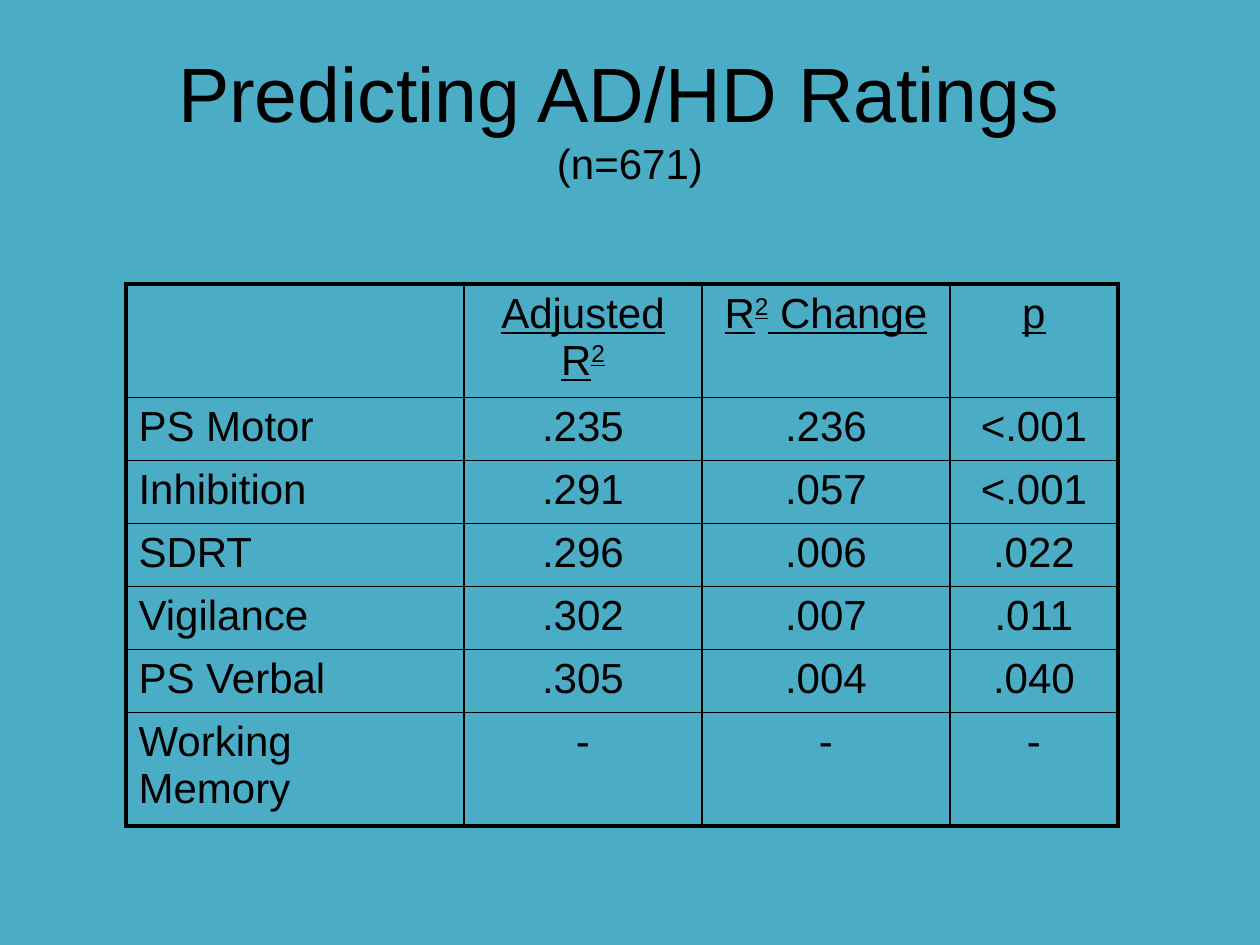
from lxml import etree
from pptx import Presentation
from pptx.dml.color import RGBColor
from pptx.enum.text import MSO_ANCHOR, PP_ALIGN
from pptx.oxml.ns import qn
from pptx.util import Emu, Pt

PX = 914400 // 126
CENTER, LEFT = PP_ALIGN.CENTER, PP_ALIGN.LEFT
FONT = "Arial"
COLORS = {"background": "4BACC6", "ink": "000000"}

TITLE = "Predicting AD/HD Ratings "
SAMPLE = "(n=671)"
TITLE_BOX = (63, 38, 1134, 157)

# "^2" marks a superscript two
ROWS = [
    ("", "Adjusted R^2", "R^2 Change", "p"),
    ("PS Motor", ".235", ".236", "<.001"),
    ("Inhibition", ".291", ".057", "<.001"),
    ("SDRT", ".296", ".006", ".022"),
    ("Vigilance", ".302", ".007", ".011"),
    ("PS Verbal", ".305", ".004", ".040"),
    ("Working Memory", "-", "-", "-"),
]
TABLE_LEFT, TABLE_TOP = 126, 284
COLUMN_WIDTHS = [338, 238, 248, 168]
ROW_HEIGHTS = [106, 61, 60, 62, 60, 62, 106]
THIN, THICK = Pt(1), Pt(2.25)


def px(length):
    return Emu(length * PX)


def color(name):
    return RGBColor.from_string(COLORS[name])


def style(para, align):
    para.alignment = align
    para.font.name = FONT
    para.font.color.rgb = color("ink")


def add_title(page):
    frame = page.shapes.add_textbox(*map(px, TITLE_BOX)).text_frame
    frame.word_wrap = True
    frame.vertical_anchor = MSO_ANCHOR.MIDDLE
    para = frame.paragraphs[0]
    style(para, CENTER)
    for text, size in ((TITLE, 44), (SAMPLE, 24)):
        if para.runs:
            para.add_line_break()
        span = para.add_run()
        span.text = text
        span.font.size = Pt(size)


def add_spans(para, text):
    """Write text as runs, raising each part marked with ^2."""
    before, mark, after = text.partition("^2")
    for part, raised in ((before, False), (mark[1:], True), (after, False)):
        if part:
            span = para.add_run()
            span.text = part
            if raised:
                span.font._element.set("baseline", "30000")


def set_borders(cell, widths):
    properties = cell._tc.get_or_add_tcPr()
    for index, (side, width) in enumerate(widths.items()):
        line = etree.Element(qn(f"a:ln{side}"), w=str(int(width)))
        fill = etree.SubElement(line, qn("a:solidFill"))
        etree.SubElement(fill, qn("a:srgbClr"), val=COLORS["ink"])
        properties.insert(index, line)


def add_ratings_table(page):
    last_row, last_column = len(ROWS) - 1, len(COLUMN_WIDTHS) - 1
    table = page.shapes.add_table(
        len(ROWS), len(COLUMN_WIDTHS), px(TABLE_LEFT), px(TABLE_TOP),
        px(sum(COLUMN_WIDTHS)), px(sum(ROW_HEIGHTS))).table
    table.first_row = table.horz_banding = False
    for column, width in zip(table.columns, COLUMN_WIDTHS):
        column.width = px(width)
    for row, height in zip(table.rows, ROW_HEIGHTS):
        row.height = px(height)
    for r, texts in enumerate(ROWS):
        for c, text in enumerate(texts):
            cell = table.cell(r, c)
            cell.fill.background()
            set_borders(cell, {
                "L": THICK if c == 0 else THIN,
                "R": THICK if c == last_column else THIN,
                "T": THICK if r == 0 else THIN,
                "B": THICK if r == last_row else THIN,
            })
            para = cell.text_frame.paragraphs[0]
            style(para, CENTER if c else LEFT)
            para.font.size = Pt(24)
            para.font.underline = r == 0
            add_spans(para, text)


def main():
    deck = Presentation()
    deck.slide_width, deck.slide_height = px(1260), px(945)
    page = deck.slides.add_slide(deck.slide_layouts[6])
    page.background.fill.solid()
    page.background.fill.fore_color.rgb = color("background")
    add_title(page)
    add_ratings_table(page)
    deck.save("out.pptx")


if __name__ == "__main__":
    main()
